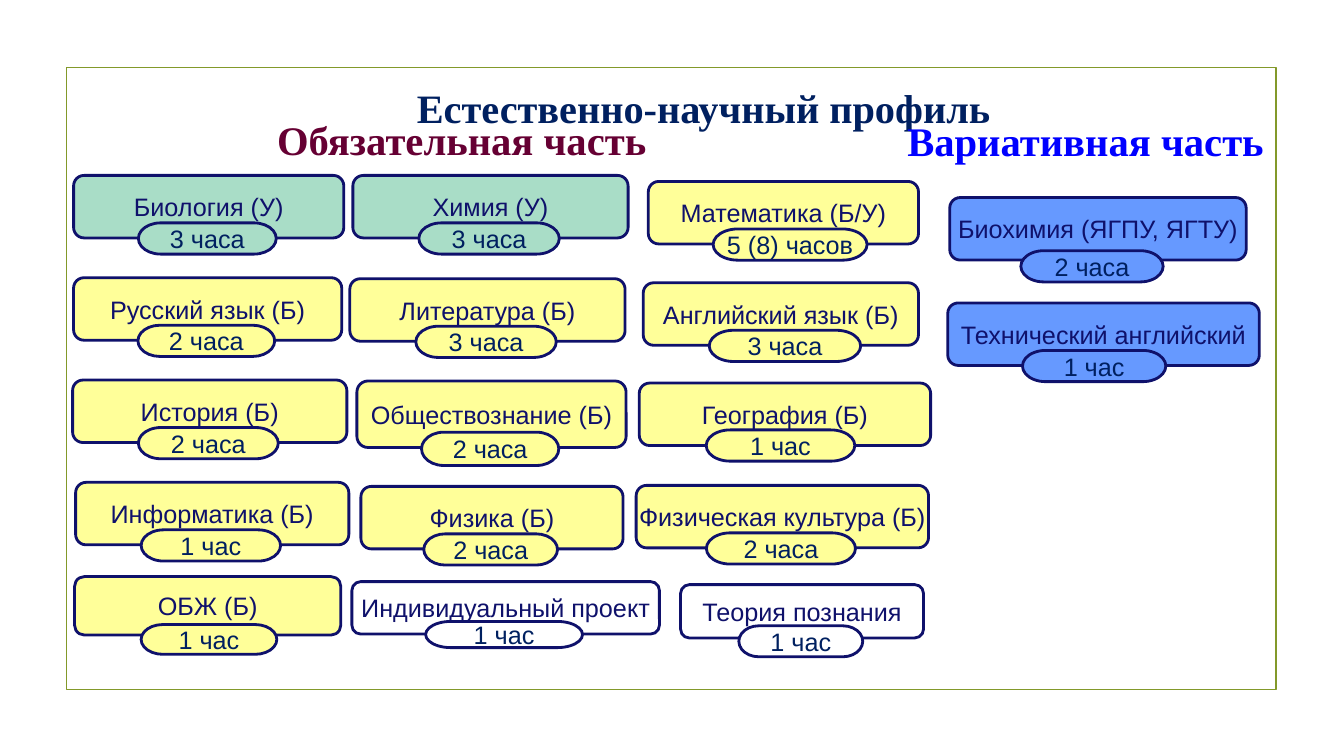
"""Build the slide with the curriculum of the natural science profile."""
import pptx
import pptx.dml.color
import pptx.enum.shapes
import pptx.enum.text
import pptx.util

RGBColor = pptx.dml.color.RGBColor
Inches = pptx.util.Inches
Pt = pptx.util.Pt
SHAPES = pptx.enum.shapes.MSO_SHAPE
ALIGN = pptx.enum.text.PP_ALIGN
ANCHOR = pptx.enum.text.MSO_ANCHOR
AUTO_SIZE = pptx.enum.text.MSO_AUTO_SIZE

SLIDE_WIDTH, SLIDE_HEIGHT = 13.33, 7.5
OLIVE = RGBColor(0x83, 0x99, 0x2A)
INDIGO = RGBColor(0x0F, 0x11, 0x6B)
NAVY = RGBColor(0x00, 0x20, 0x60)
MAROON = RGBColor(0x66, 0x00, 0x33)
BRIGHT_BLUE = RGBColor(0x00, 0x00, 0xFF)
GREEN = RGBColor(0xA9, 0xDD, 0xC7)
YELLOW = RGBColor(0xFF, 0xFF, 0x99)
BLUE = RGBColor(0x66, 0x99, 0xFF)
WHITE = RGBColor(0xFF, 0xFF, 0xFF)

FRAME = (0.66, 0.67, 12, 6.17)
REQUIRED_AREA = (0.72, 1.74, 8.51, 4.78)
ELECTIVE_AREA = (9.4, 1.96, 3.09, 1.83)
ROW_PITCH = 1.015
CARD_HEIGHT = 0.62
BADGE = (0.24, 0.76, 0.51, 0.5)

# Subject, hours, fill, row, left, shift below the row, width, height, badge shares of the card
REQUIRED_SUBJECTS = [
    ("Биология (У)", "3 часа", GREEN, 0, 0.01, 0, 2.68, CARD_HEIGHT, BADGE),
    ("Химия (У)", "3 часа", GREEN, 0, 2.78, 0, 2.73, CARD_HEIGHT, BADGE),
    ("Математика (Б/У)", "5 (8) часов", YELLOW, 0, 5.71, 0.06, 2.68, CARD_HEIGHT, (0.24, 0.76, 0.57, 0.5)),
    ("Русский язык (Б)", "2 часа", YELLOW, 1, 0.01, 0, 2.66, CARD_HEIGHT, BADGE),
    ("Литература (Б)", "3 часа", YELLOW, 1, 2.75, 0.01, 2.73, CARD_HEIGHT, BADGE),
    ("Английский язык (Б)", "3 часа", YELLOW, 1, 5.66, 0.05, 2.73, CARD_HEIGHT, (0.24, 0.76, 0.55, 0.5)),
    ("История (Б)", "2 часа", YELLOW, 2, 0, 0, 2.72, CARD_HEIGHT, BADGE),
    ("Обществознание (Б)", "2 часа", YELLOW, 2, 2.82, 0.01, 2.67, 0.66, (0.24, 0.77, 0.51, 0.5)),
    ("География (Б)", "1 час", YELLOW, 2, 5.62, 0.03, 2.89, CARD_HEIGHT, (0.23, 0.75, 0.51, 0.5)),
    ("Информатика (Б)", "1 час", YELLOW, 3, 0.03, 0, 2.71, CARD_HEIGHT, BADGE),
    ("Физика (Б)", "2 часа", YELLOW, 3, 2.86, 0.04, 2.6, CARD_HEIGHT, BADGE),
    ("Физическая культура (Б)", "2 часа", YELLOW, 3, 5.59, 0.03, 2.9, CARD_HEIGHT, BADGE),
    ("ОБЖ (Б)", "1 час", YELLOW, 4, 0.02, -0.08, 2.64, 0.58, (0.25, 0.82, 0.51, 0.51)),
    ("Индивидуальный проект", "1 час", WHITE, 4, 2.77, -0.03, 3.05, 0.52, BADGE),
    ("Теория познания", "1 час", WHITE, 4, 6.03, 0, 2.41, 0.53, (0.24, 0.77, 0.51, 0.58)),
]
ELECTIVE_SUBJECTS = [
    ("Биохимия (ЯГПУ, ЯГТУ)", "2 часа", BLUE, 0, 0.02, 0, 2.94, CARD_HEIGHT, (0.24, 0.85, 0.48, 0.5)),
    ("Технический английский", "1 час", BLUE, 1, 0, 0.03, 3.09, CARD_HEIGHT, (0.24, 0.76, 0.46, 0.5)),
]


def format_text(shape, text, font_name, size, color, bold=False):
    """Put one formatted line of text into a shape."""
    shape.text_frame.text = text
    font = shape.text_frame.paragraphs[0].runs[0].font
    font.name, font.size, font.bold = font_name, Pt(size), bold
    font.color.rgb = color


def add_panel(slide, preset, box, fill, line_color, line_width):
    """Add a preset shape with a plain fill and outline."""
    shape = slide.shapes.add_shape(preset, *map(Inches, box))
    shape.shadow.inherit = False
    if fill is None:
        shape.fill.background()
    else:
        shape.fill.solid()
        shape.fill.fore_color.rgb = fill
    shape.line.color.rgb = line_color
    shape.line.width = Pt(line_width)
    return shape


def add_label(slide, preset, box, fill, text, color):
    """Add an outlined shape with centred text."""
    shape = add_panel(slide, preset, box, fill, INDIGO, 2)
    format_text(shape, text, "Arial", 18, color)
    shape.text_frame.word_wrap = False
    shape.text_frame.vertical_anchor = ANCHOR.MIDDLE
    shape.text_frame.paragraphs[0].alignment = ALIGN.CENTER


def add_subject(slide, box, subject, hours, fill, badge):
    """Add a subject card with its hours badge over the lower edge."""
    left, top, width, height = box
    across, down, wide, high = badge
    badge_box = (left + across * width, top + down * height, wide * width, high * height)
    add_label(slide, SHAPES.FLOWCHART_ALTERNATE_PROCESS, box, fill, subject, INDIGO)
    add_label(slide, SHAPES.FLOWCHART_TERMINATOR, badge_box, fill, hours, NAVY)


def add_subjects(slide, area, subjects):
    """Place the subject cards of one part in rows inside its area."""
    for subject, hours, fill, row, left, shift, width, height, badge in subjects:
        box = (area[0] + left, area[1] + row * ROW_PITCH + shift, width, height)
        add_subject(slide, box, subject, hours, fill, badge)


def add_heading(slide, box, text, color, wrap):
    """Add the heading of one part."""
    heading = slide.shapes.add_textbox(*map(Inches, box))
    format_text(heading, text, "Times New Roman", 29, color, True)
    heading.text_frame.word_wrap = wrap
    heading.text_frame.auto_size = AUTO_SIZE.SHAPE_TO_FIT_TEXT


def add_title(slide, box):
    """Add the centred slide title."""
    title = slide.shapes.add_textbox(*map(Inches, box))
    format_text(title, "Естественно-научный профиль", "Times New Roman", 28.8, NAVY, True)
    text_frame = title.text_frame
    text_frame.word_wrap = True
    text_frame.vertical_anchor = ANCHOR.MIDDLE
    text_frame.margin_top, text_frame.margin_bottom = 0, Inches(0.15)
    text_frame.paragraphs[0].alignment = ALIGN.CENTER


def main():
    """Build and save the presentation."""
    presentation = pptx.Presentation()
    presentation.slide_width = Inches(SLIDE_WIDTH)
    presentation.slide_height = Inches(SLIDE_HEIGHT)
    slide = presentation.slides.add_slide(presentation.slide_layouts[6])
    add_panel(slide, SHAPES.RECTANGLE, FRAME, None, OLIVE, 1.25)
    add_title(slide, (2.31, 1.01, 9.34, 0.27))
    add_heading(slide, (2.65, 1.09, 3.9, 0.59), "Обязательная часть", MAROON, True)
    add_heading(slide, (8.9, 1.1, 3.89, 0.61), "Вариативная часть", BRIGHT_BLUE, False)
    add_subjects(slide, REQUIRED_AREA, REQUIRED_SUBJECTS)
    add_subjects(slide, ELECTIVE_AREA, ELECTIVE_SUBJECTS)
    presentation.save("out.pptx")


if __name__ == "__main__":
    main()
